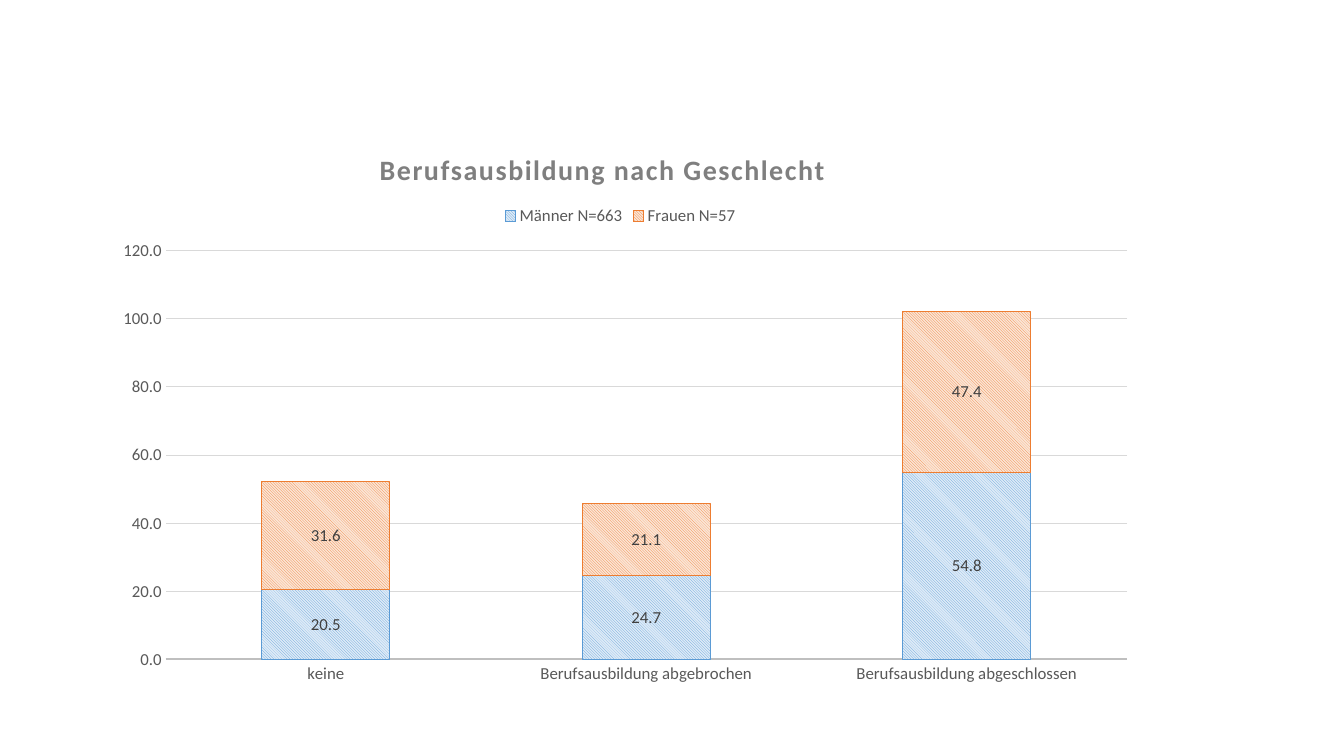
from lxml.etree import SubElement
from pptx import Presentation
from pptx.chart.data import CategoryChartData
from pptx.dml.color import RGBColor
from pptx.enum.chart import XL_CHART_TYPE as ChartType
from pptx.enum.chart import XL_LABEL_POSITION as LabelPos
from pptx.enum.chart import XL_LEGEND_POSITION as LegendPos
from pptx.enum.chart import XL_TICK_MARK as TickMark
from pptx.enum.dml import MSO_PATTERN as Pattern
from pptx.oxml.ns import qn
from pptx.util import Pt

FONT = "Calibri"
TITLE_GRAY = RGBColor(0x7F, 0x7F, 0x7F)
TEXT_GRAY = RGBColor(0x59, 0x59, 0x59)
LABEL_GRAY = RGBColor(0x40, 0x40, 0x40)
AXIS_GRAY = RGBColor(0xBF, 0xBF, 0xBF)
GRID_GRAY = RGBColor(0xD9, 0xD9, 0xD9)
BLUE = RGBColor(0x5B, 0x9B, 0xD5)
LIGHT_BLUE = RGBColor(0xDE, 0xEB, 0xF7)
ORANGE = RGBColor(0xED, 0x7D, 0x31)
LIGHT_ORANGE = RGBColor(0xFB, 0xE5, 0xD6)

NUMBER_FORMAT = "###0.0"
CATEGORIES = ["keine", "Berufsausbildung abgebrochen",
              "Berufsausbildung abgeschlossen"]
SERIES = [
    ("Männer N=663", (20.5, 24.7, 54.8), BLUE, LIGHT_BLUE),
    ("Frauen N=57", (31.6, 21.1, 47.4), ORANGE, LIGHT_ORANGE),
]


def set_font(font, color, size=12, bold=False):
    font.name = FONT
    font.size = Pt(size)
    font.bold = bold
    font.color.rgb = color


def set_line(line, color, width):
    line.color.rgb = color
    line.width = Pt(width)


def place(element, **fractions):
    layout = element.find(qn("c:layout"))
    if layout is None:
        layout = SubElement(element, qn("c:layout"))
        previous = element.find(qn("c:tx"))
        if previous is None:
            previous = element.find(qn("c:legendPos"))
        if previous is None:
            element.insert(0, layout)
        else:
            previous.addnext(layout)
    manual = SubElement(layout, qn("c:manualLayout"))
    if "w" in fractions:
        SubElement(manual, qn("c:layoutTarget")).set("val", "inner")
    for key in ("x", "y"):
        SubElement(manual, qn(f"c:{key}Mode")).set("val", "edge")
    for key, value in fractions.items():
        SubElement(manual, qn(f"c:{key}")).set("val", str(value))


def add_title(chart, text):
    tf = chart.chart_title.text_frame
    tf.text = text
    p = tf.paragraphs[0]
    set_font(p.font, TITLE_GRAY, 20, True)
    r = p.runs[0]
    set_font(r.font, TITLE_GRAY, 20, True)
    r.font._element.set("spc", "100")
    chart.chart_title.include_in_layout = False
    place(chart.chart_title._element, x=0.26, y=0.04)


def add_legend(chart):
    chart.has_legend = True
    legend = chart.legend
    legend.position = LegendPos.TOP
    legend.include_in_layout = False
    set_font(legend.font, TEXT_GRAY)
    place(legend._element, x=0.38, y=0.14)


def style_axes(chart):
    for axis in (chart.category_axis, chart.value_axis):
        axis.major_tick_mark = TickMark.NONE
        axis.minor_tick_mark = TickMark.NONE
        set_font(axis.tick_labels.font, TEXT_GRAY)
    set_line(chart.category_axis.format.line, AXIS_GRAY, 1.5)
    values = chart.value_axis
    values.minimum_scale, values.maximum_scale, values.major_unit = 0, 120, 20
    values.format.line.fill.background()
    set_line(values.major_gridlines.format.line, GRID_GRAY, 0.75)
    values.tick_labels.number_format = NUMBER_FORMAT
    values.tick_labels.number_format_is_linked = False


def style_series(series, color, light):
    fill = series.format.fill
    fill.patterned()
    fill.pattern = Pattern.LIGHT_DOWNWARD_DIAGONAL
    fill.fore_color.rgb = color
    fill.back_color.rgb = light
    set_line(series.format.line, color, 0.75)
    labels = series.data_labels
    labels.show_value = True
    labels.position = LabelPos.CENTER
    labels.number_format = NUMBER_FORMAT
    labels.number_format_is_linked = False
    set_font(labels.font, LABEL_GRAY)


def add_stacked_chart(s):
    data = CategoryChartData(number_format=NUMBER_FORMAT)
    data.categories = CATEGORIES
    for name, values, *_ in SERIES:
        data.add_series(name, values)
    chart = s.shapes.add_chart(ChartType.COLUMN_STACKED, Pt(73.5), Pt(87),
                               Pt(746.5), Pt(409.5), data).chart
    set_font(chart.font, TEXT_GRAY, 10)
    add_title(chart, "Berufsausbildung nach Geschlecht")
    add_legend(chart)
    style_axes(chart)
    plot = chart.plots[0]
    plot.gap_width, plot.overlap = 150, 100
    plot.vary_by_categories = False
    for series, (_, _, color, light) in zip(plot.series, SERIES):
        style_series(series, color, light)
    place(chart._chartSpace.chart.plotArea, x=0.06, y=0.225, w=0.92, h=0.713)


def main():
    prs = Presentation()
    prs.slide_width, prs.slide_height = Pt(960), Pt(540)
    s = prs.slides.add_slide(prs.slide_layouts[6])
    add_stacked_chart(s)
    prs.save("out.pptx")


if __name__ == "__main__":
    main()
